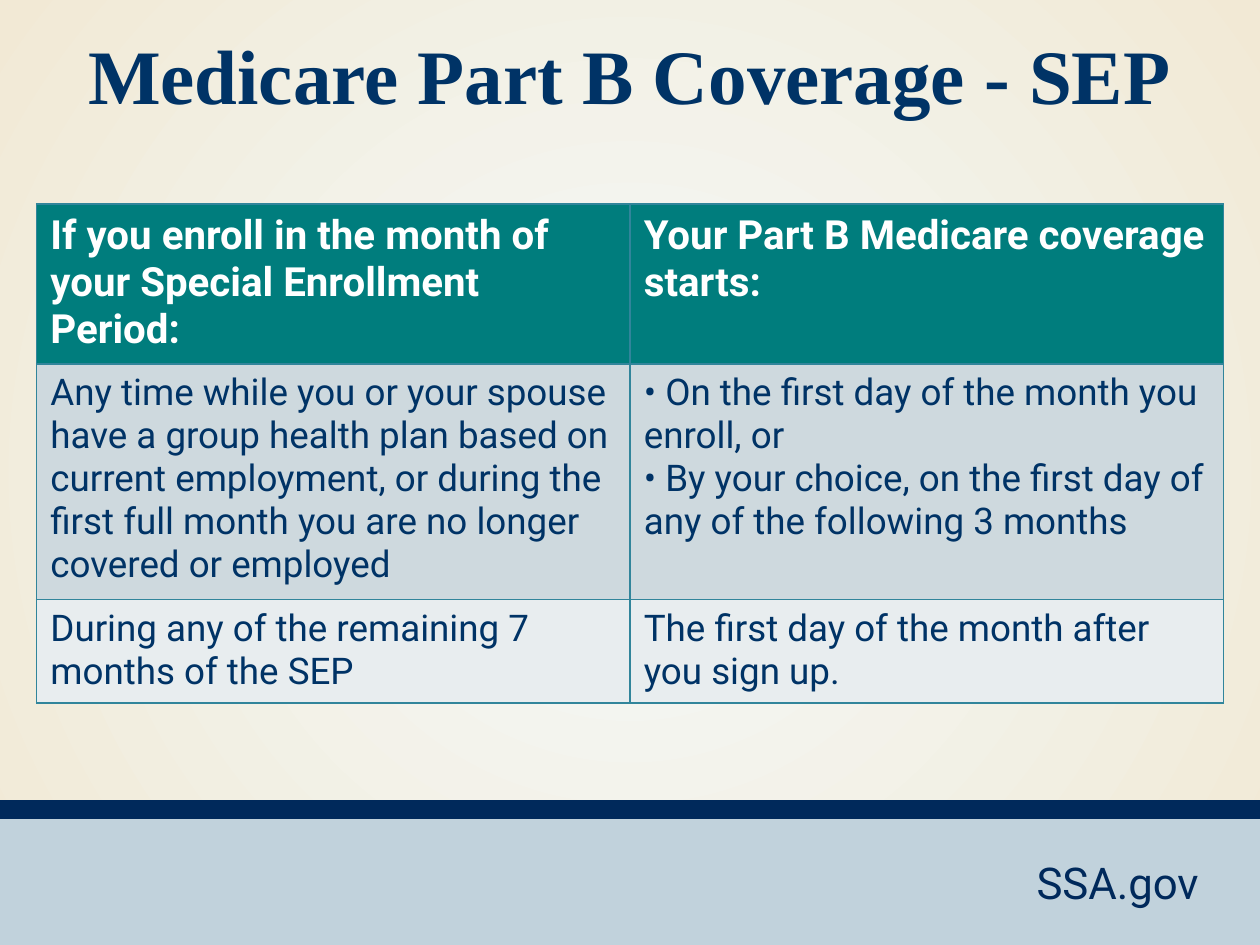
from dataclasses import dataclass

from lxml.etree import SubElement
from pptx import Presentation
from pptx.dml.color import RGBColor
from pptx.enum.shapes import MSO_SHAPE
from pptx.enum.text import MSO_ANCHOR, PP_ALIGN
from pptx.oxml.ns import qn
from pptx.util import Inches, Pt


@dataclass(frozen=True)
class Theme:
    """Colours, fonts and type sizes of the slide."""
    glow: str = "F3FAFB"
    cream: str = "F2E9D5"
    band: str = "C1D2DC"
    navy: str = "00295B"
    ink: str = "003366"
    white: str = "FFFFFF"
    teal: str = "007D7D"
    border: str = "31859B"
    stripes: tuple = ("CED9DE", "E8EDEF")
    serif: str = "Times New Roman"
    sans: str = "Roboto"
    title: int = 44
    head: int = 23
    body: int = 21
    site: int = 25


THEME = Theme()
ROWS = [
    ("If you enroll in the month of your Special Enrollment Period:",
     "Your Part B Medicare coverage starts:"),
    ("Any time while you or your spouse have a group health plan based on current "
     "employment, or during the first full month you are no longer covered or employed",
     "• On the first day of the month you enroll, or\n"
     "• By your choice, on the first day of any of the following 3 months"),
    ("During any of the remaining 7 months of the SEP",
     "The first day of the month after you sign up."),
]
ROW_HEIGHTS = (1.24, 1.83, 0.79)


def write(tf, text, color, align=PP_ALIGN.LEFT, **font):
    """Fill a text frame, one paragraph per line, in one format."""
    tf.word_wrap = True
    tf.text = text
    for p in tf.paragraphs:
        p.alignment = align
        for r in p.runs:
            r.font.color.rgb = RGBColor.from_string(color)
            for name, value in font.items():
                setattr(r.font, name, value)


def add_label(s, box, text, color, **font):
    """Add a centred text box."""
    tf = s.shapes.add_textbox(*map(Inches, box)).text_frame
    tf.vertical_anchor = MSO_ANCHOR.MIDDLE
    write(tf, text, color, PP_ALIGN.CENTER, **font)


def add_band(s, box, color):
    """Add a plain filled rectangle."""
    sp = s.shapes.add_shape(MSO_SHAPE.RECTANGLE, *map(Inches, box))
    sp.shadow.inherit = False
    sp.fill.solid()
    sp.fill.fore_color.rgb = RGBColor.from_string(color)
    sp.line.fill.background()


def add_background(s):
    """Give the slide a radial gradient from its centre."""
    fill = s.background.fill
    fill.gradient()
    for stop, position, color in zip(fill.gradient_stops, (0, 1), (THEME.glow, THEME.cream)):
        stop.position = position
        stop.color.rgb = RGBColor.from_string(color)
    grad = s.element.find(".//" + qn("a:gradFill"))
    grad.remove(grad.find(qn("a:lin")))
    path = SubElement(grad, qn("a:path"), path="circle")
    SubElement(path, qn("a:fillToRect"), dict.fromkeys("ltrb", "50000"))


def add_footer(s, box):
    """Add the footer band, its top rule and the site address."""
    left, top, width, height = box
    add_band(s, (left, top + 0.1, width, height - 0.1), THEME.band)
    add_band(s, (left, top, width, 0.15), THEME.navy)
    add_label(s, (left + width - 2.16, top + 0.39, 2.06, 0.52), "SSA.gov",
              THEME.navy, name=THEME.sans, size=Pt(THEME.site))


def style_cell(cell, fill):
    """Set a cell's margins, borders and fill."""
    margins = {"margin_left": 0.11, "margin_right": 0.11, "margin_top": 0.06, "margin_bottom": 0.06}
    for name, value in margins.items():
        setattr(cell, name, Inches(value))
    pr = cell._tc.get_or_add_tcPr()
    for side in "LRTB":
        ln = SubElement(pr, qn(f"a:ln{side}"), w=str(Pt(1)))
        SubElement(SubElement(ln, qn("a:solidFill")), qn("a:srgbClr"), val=THEME.border)
    cell.fill.solid()
    cell.fill.fore_color.rgb = RGBColor.from_string(fill)


def add_coverage_table(s, box):
    """Add the table of enrollment months and coverage starts."""
    table = s.shapes.add_table(len(ROWS), 2, *map(Inches, box)).table
    for row, height in zip(table.rows, ROW_HEIGHTS):
        row.height = Inches(height)
    for i, texts in enumerate(ROWS):
        head = i == 0
        for j, text in enumerate(texts):
            cell = table.cell(i, j)
            style_cell(cell, THEME.teal if head else THEME.stripes[(i - 1) % 2])
            write(cell.text_frame, text, THEME.white if head else THEME.ink, name=THEME.sans,
                  size=Pt(THEME.head if head else THEME.body), bold=head)


def main():
    """Build and save the slide."""
    prs = Presentation()
    prs.slide_width, prs.slide_height = Inches(10), Inches(7.5)
    s = prs.slides.add_slide(prs.slide_layouts[6])
    add_background(s)
    add_footer(s, (0, 6.35, 10, 1.15))
    add_label(s, (0, 0.17, 10, 0.83), "Medicare Part B Coverage - SEP",
              THEME.ink, name=THEME.serif, size=Pt(THEME.title), bold=True)
    add_coverage_table(s, (0.29, 1.62, 9.42, sum(ROW_HEIGHTS)))
    prs.save("out.pptx")


if __name__ == "__main__":
    main()
